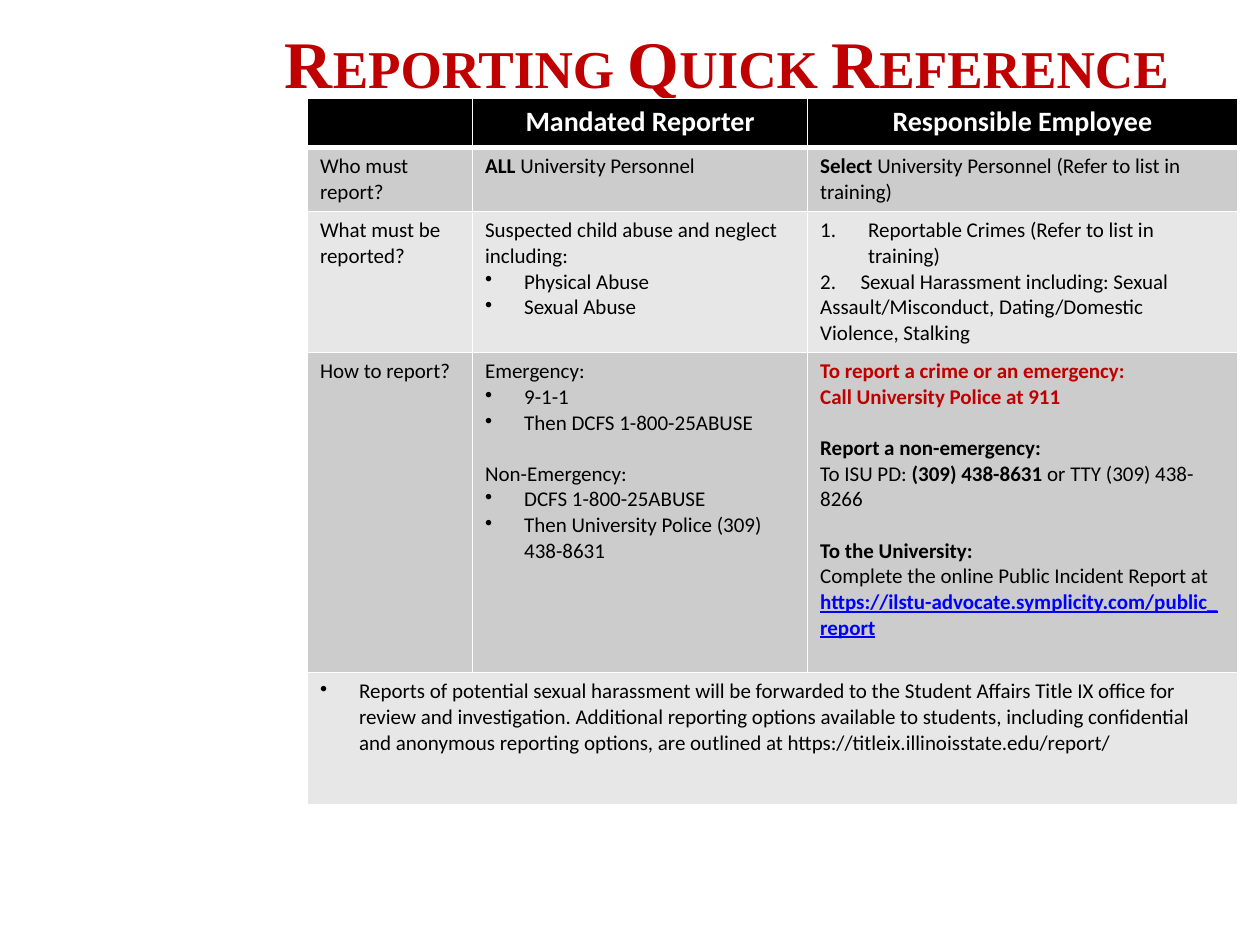
"""Build the reporting quick reference slide."""
import pptx
import pptx.dml.color
import pptx.enum.text
import pptx.oxml.ns
import pptx.util
from lxml import etree

Inches = pptx.util.Inches
ALIGN = pptx.enum.text.PP_ALIGN

THEME = {
    "title_font": "Times New Roman", "body_font": "Calibri",
    "title_size": 38, "header_size": 16, "body_size": 12, "blank_line": 14.65,
    "accent": "C00000", "link": "0000FF", "text": "000000", "white": "FFFFFF",
    "header_fill": "000000", "bands": ("CCCCCC", "E7E7E7"),
}

TITLE = "Reporting Quick Reference"
HEADERS = ["", "Mandated Reporter", "Responsible Employee"]
ROWS = [
    [
        [("plain", "Who must report?")],
        [("plain", ("ALL", "bold"), " University Personnel")],
        [("plain", ("Select ", "bold"), "University Personnel (Refer to list in training)")],
    ],
    [
        [("plain", "What must be reported?")],
        [("plain", "Suspected child abuse and neglect including:"),
         ("bullet", "Physical Abuse"),
         ("bullet", "Sexual Abuse")],
        [("number", "Reportable Crimes (Refer to list in training)"),
         ("tabbed", "2.\tSexual Harassment including: Sexual Assault/Misconduct, "
                    "Dating/Domestic Violence, Stalking")],
    ],
    [
        [("plain", "How to report?")],
        [("plain", "Emergency:"),
         ("bullet", "9-1-1"),
         ("bullet", "Then DCFS 1-800-25ABUSE"),
         ("spaced", "Non-Emergency:"),
         ("bullet", "DCFS 1-800-25ABUSE"),
         ("bullet", "Then University Police (309) 438-8631")],
        [("plain", ("To report a crime or an emergency:", "alert")),
         ("plain", ("Call University Police at 911", "alert")),
         ("spaced", ("Report a non-emergency:", "bold")),
         ("plain", "To ISU PD: ", ("(309) 438-8631", "bold"), " or TTY (309) 438-8266"),
         ("spaced", ("To the University:", "bold")),
         ("plain", "Complete the online Public Incident Report at ",
          ("https://ilstu-advocate.symplicity.com/public_report", "link"))],
    ],
    [
        [("bullet", "Reports of potential sexual harassment will be forwarded to the Student "
                    "Affairs Title IX office for review and investigation. Additional reporting "
                    "options available to students, including confidential and anonymous "
                    "reporting options, are outlined at https://titleix.illinoisstate.edu/report/")],
    ],
]

TITLE_BOX = (2.16, 0.1, 7.35, 0.78)
TABLE_ORIGIN = (2.44, 0.78)
COLUMN_WIDTHS = [1.31, 2.66, 3.41]
ROW_HEIGHTS = [0.39, 0.51, 1.12, 2.54, 1.05]

PARAGRAPH_KINDS = {
    "bullet": ({"marL": 0.31, "indent": -0.31}, "buChar", {"char": "•"}),
    "number": ({"marL": 0.38, "indent": -0.38}, "buAutoNum", {"type": "arabicPeriod"}),
    "tabbed": ({"marR": 0.1}, "tabLst", {}),
}
TAB_STOP = 0.32


def color(value):
    return pptx.dml.color.RGBColor.from_string(value)


def add_element(parent, tag, **attributes):
    return etree.SubElement(parent, pptx.oxml.ns.qn("a:" + tag), attributes)


def set_font(font, name, size, value, bold):
    font.name, font.size, font.bold = name, pptx.util.Pt(size), bold
    font.color.rgb = color(value)


def style_run(run, style):
    if style in ("bold", "alert", "link"):
        run.font.bold = True
    if style == "alert":
        run.font.color.rgb = color(THEME["accent"])
    elif style == "link":
        run.font.color.rgb = color(THEME["link"])
        run.font.underline = True


def format_paragraph(paragraph, kind):
    if kind == "spaced":
        paragraph.space_before = pptx.util.Pt(THEME["blank_line"])
    elif kind in PARAGRAPH_KINDS:
        indents, tag, attributes = PARAGRAPH_KINDS[kind]
        properties = paragraph._p.get_or_add_pPr()
        for name, length in indents.items():
            properties.set(name, str(Inches(length)))
        element = add_element(properties, tag, **attributes)
        if tag == "tabLst":
            add_element(element, "tab", pos=str(Inches(TAB_STOP)), algn="l")


def fill_body_cell(cell, paragraphs):
    for index, (kind, *pieces) in enumerate(paragraphs):
        frame = cell.text_frame
        paragraph = frame.add_paragraph() if index else frame.paragraphs[0]
        format_paragraph(paragraph, kind)
        set_font(paragraph.font, THEME["body_font"], THEME["body_size"], THEME["text"], False)
        for piece in pieces:
            text, style = (piece, None) if isinstance(piece, str) else piece
            run = paragraph.add_run()
            run.text = text
            style_run(run, style)


def paint_cell(cell, fill, bottom_width):
    cell.fill.solid()
    cell.fill.fore_color.rgb = color(fill)
    properties = cell._tc.get_or_add_tcPr()
    widths = {"lnL": 1, "lnR": 1, "lnT": 1, "lnB": bottom_width}
    for position, (tag, width) in enumerate(widths.items()):
        line = add_element(properties, tag, w=str(pptx.util.Pt(width)))
        add_element(add_element(line, "solidFill"), "srgbClr", val=THEME["white"])
        properties.insert(position, line)


def add_title(slide):
    title = slide.shapes.title
    title.left, title.top, title.width, title.height = map(Inches, TITLE_BOX)
    frame = title.text_frame
    frame.auto_size = pptx.enum.text.MSO_AUTO_SIZE.NONE
    frame.vertical_anchor = pptx.enum.text.MSO_ANCHOR.MIDDLE
    paragraph = frame.paragraphs[0]
    paragraph.alignment = ALIGN.LEFT
    set_font(paragraph.font, THEME["title_font"], THEME["title_size"], THEME["accent"], True)
    run = paragraph.add_run()
    run.text = TITLE
    run._r.get_or_add_rPr().set("cap", "small")


def add_reference_table(slide):
    table = slide.shapes.add_table(
        len(ROW_HEIGHTS), len(COLUMN_WIDTHS), *map(Inches, TABLE_ORIGIN),
        Inches(sum(COLUMN_WIDTHS)), Inches(sum(ROW_HEIGHTS))).table
    for column, width in zip(table.columns, COLUMN_WIDTHS):
        column.width = Inches(width)
    for row, height in zip(table.rows, ROW_HEIGHTS):
        row.height = Inches(height)
    for index, row in enumerate(table.rows):
        fill = THEME["bands"][(index - 1) % 2] if index else THEME["header_fill"]
        for cell in row.cells:
            paint_cell(cell, fill, 1 if index else 3)
    for column, text in enumerate(HEADERS):
        paragraph = table.cell(0, column).text_frame.paragraphs[0]
        paragraph.text = text
        paragraph.alignment = ALIGN.CENTER
        set_font(paragraph.font, THEME["body_font"], THEME["header_size"], THEME["white"], True)
    last_row = len(ROWS)
    table.cell(last_row, 0).merge(table.cell(last_row, len(COLUMN_WIDTHS) - 1))
    for row, cells in enumerate(ROWS, 1):
        for column, paragraphs in enumerate(cells):
            fill_body_cell(table.cell(row, column), paragraphs)


def main():
    presentation = pptx.Presentation()
    presentation.slide_width, presentation.slide_height = Inches(10), Inches(7.5)
    slide = presentation.slides.add_slide(presentation.slide_layouts.get_by_name("Title Only"))
    add_title(slide)
    add_reference_table(slide)
    presentation.save("out.pptx")


if __name__ == "__main__":
    main()
